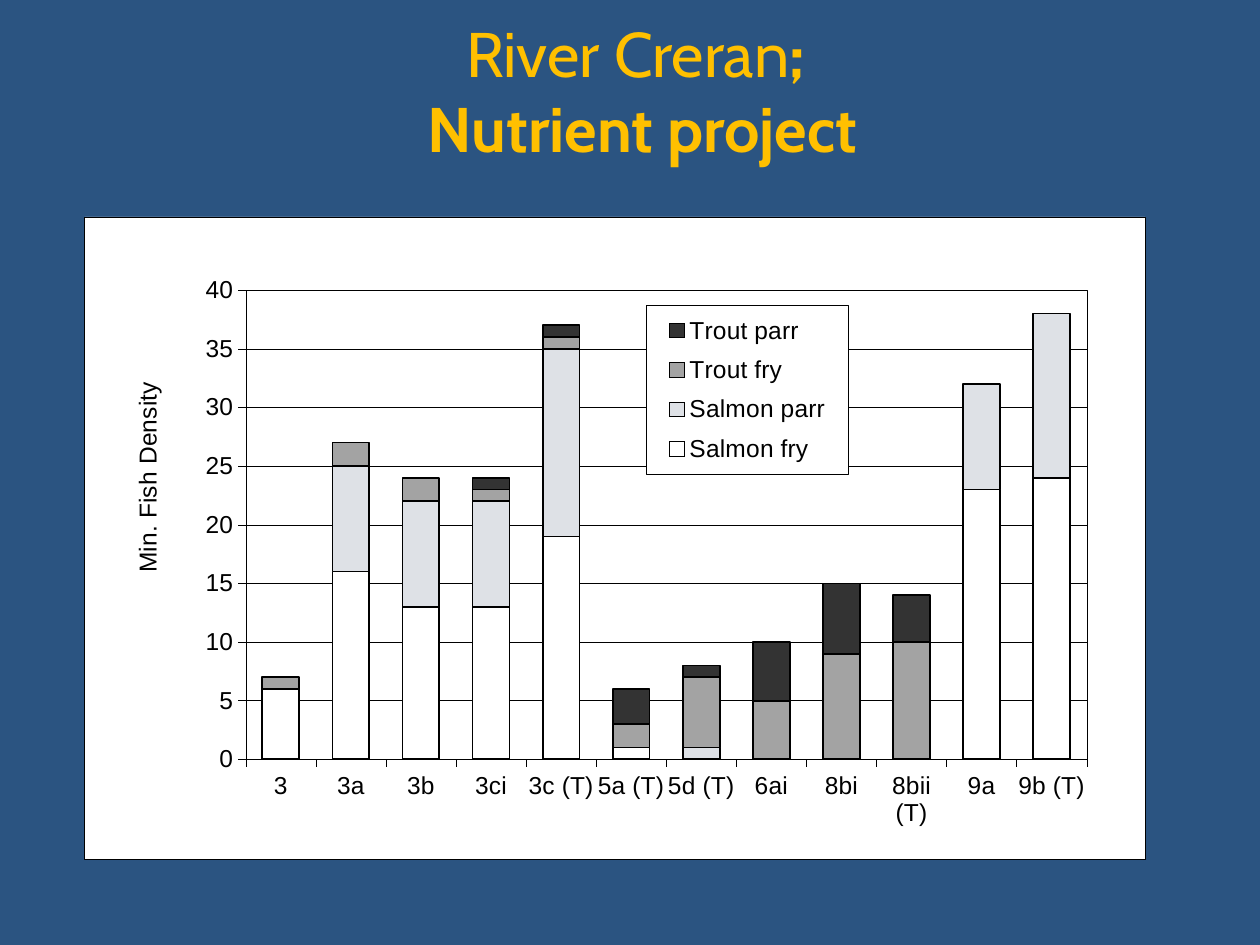
from lxml import etree
from pptx import Presentation
from pptx import util as u
from pptx.chart.data import CategoryChartData
from pptx.dml.color import RGBColor
from pptx.enum import chart as ch, text
from pptx.oxml import parse_xml
from pptx.oxml.ns import nsdecls, qn

# Content
TITLE = ("River Creran", "; ", "Nutrient project")
AXIS_TITLE = "Min. Fish Density"
SITES = ["3", "3a", "3b", "3ci", "3c (T)", "5a (T)", "5d (T)",
         "6ai", "8bi", "8bii (T)", "9a", "9b (T)"]
SERIES = [
    ("Salmon fry", "FFFFFF", [6, 16, 13, 13, 19, 1, 0, 0, 0, 0, 23, 24]),
    ("Salmon parr", "DEE1E6", [0, 9, 9, 9, 16, 0, 1, 0, 0, 0, 9, 14]),
    ("Trout fry", "A3A3A3", [1, 2, 2, 1, 1, 2, 6, 5, 9, 10, 0, 0]),
    ("Trout parr", "333333", [0, 0, 0, 1, 1, 3, 1, 5, 6, 4, 0, 0]),
]


class Theme:
    background, title, ink, paper = "2B5481", "FFC000", "000000", "FFFFFF"
    title_font, chart_font = "Cabin", "Arial"
    title_size, chart_size = u.Pt(36), u.Pt(14)
    hairline, bar_line = u.Pt(0.25), u.Pt(1)


def rgb(value):
    return RGBColor.from_string(value)


def style_line(line, width):
    line.color.rgb = rgb(Theme.ink)
    line.width = width


def panel():
    """White fill with a hairline border, for chart parts without a format."""
    return parse_xml(
        f'<c:spPr {nsdecls("c", "a")}>'
        f'<a:solidFill><a:srgbClr val="{Theme.paper}"/></a:solidFill>'
        f'<a:ln w="{Theme.hairline}"><a:solidFill>'
        f'<a:srgbClr val="{Theme.ink}"/></a:solidFill></a:ln></c:spPr>')


def place(parent, after, x, y, w=None, h=None, inner=False):
    """Give a chart part a manual layout, as fractions of the chart."""
    for old in parent.findall(qn("c:layout")):
        parent.remove(old)
    layout = etree.Element(qn("c:layout"))
    manual = etree.SubElement(layout, qn("c:manualLayout"))
    settings = [("layoutTarget", "inner" if inner else None),
                ("xMode", "edge"), ("yMode", "edge"),
                ("x", x), ("y", y), ("w", w), ("h", h)]
    for tag, value in settings:
        if value is not None:
            etree.SubElement(manual, qn(f"c:{tag}")).set("val", str(value))
    if after is None:
        parent.insert(0, layout)
    else:
        parent.find(qn(after)).addnext(layout)


def add_title(slide):
    sp = slide.shapes.title
    sp.left, sp.top, sp.width, sp.height = map(u.Cm, (0.89, 0.91, 24.13, 1.8))
    tf = sp.text_frame
    tf.auto_size = text.MSO_AUTO_SIZE.NONE
    tf.vertical_anchor = text.MSO_ANCHOR.MIDDLE
    p = tf.paragraphs[0]
    p.alignment = text.PP_ALIGN.CENTER
    river, mark, project = TITLE
    for i, part in enumerate((river, mark, project)):
        if part == project:
            p.add_line_break()
        r = p.add_run()
        r.text = part
        r.font.name, r.font.size = Theme.title_font, Theme.title_size
        r.font.bold = i > 0
        r.font.color.rgb = rgb(Theme.title)
    # The break takes the size of the text around it
    for br in p._p.findall(qn("a:br")):
        etree.SubElement(br, qn("a:rPr")).set("sz", str(int(Theme.title_size.pt * 100)))


def add_density_chart(slide):
    data = CategoryChartData(number_format="0")
    data.categories = SITES
    for name, _, values in SERIES:
        data.add_series(name, values)
    chart = slide.shapes.add_chart(
        ch.XL_CHART_TYPE.COLUMN_STACKED,
        *map(u.Cm, (1.7, 4.37, 21.39, 12.95)), data).chart
    chart.has_title = False
    chart.font.name, chart.font.size = Theme.chart_font, Theme.chart_size
    chart.font.color.rgb = rgb(Theme.ink)

    # Bars
    plot = chart.plots[0]
    plot.gap_width, plot.overlap = 90, 100
    plot.vary_by_categories = False
    for series, (_, color, _) in zip(plot.series, SERIES):
        series.format.fill.solid()
        series.format.fill.fore_color.rgb = rgb(color)
        style_line(series.format.line, Theme.bar_line)

    # Axes
    for axis in (chart.category_axis, chart.value_axis):
        axis.major_tick_mark = ch.XL_TICK_MARK.OUTSIDE
        axis.minor_tick_mark = ch.XL_TICK_MARK.NONE
        style_line(axis.format.line, Theme.hairline)
    axis = chart.value_axis
    axis.minimum_scale, axis.maximum_scale, axis.major_unit = 0, 40, 5
    axis.tick_labels.number_format = "0"
    axis.tick_labels.number_format_is_linked = False
    axis.has_major_gridlines = True
    style_line(axis.major_gridlines.format.line, Theme.hairline)
    tf = axis.axis_title.text_frame
    tf.text = AXIS_TITLE
    font = tf.paragraphs[0].runs[0].font
    font.name, font.size, font.bold = Theme.chart_font, Theme.chart_size, False
    font.color.rgb = rgb(Theme.ink)
    tf._txBody.find(qn("a:bodyPr")).set("rot", "-5400000")
    tf._txBody.find(qn("a:bodyPr")).set("vert", "horz")
    place(axis.axis_title._element, "c:tx", 0.04, 0.25)

    # Legend, plot area and chart frame
    chart.has_legend = True
    legend = chart.legend
    legend.position = ch.XL_LEGEND_POSITION.RIGHT
    legend.include_in_layout = False
    place(legend._element, "c:legendPos", 0.53, 0.137, 0.19, 0.264)
    legend._element.find(qn("c:overlay")).addnext(panel())
    space = chart._chartSpace
    area = space.find(qn("c:chart")).find(qn("c:plotArea"))
    place(area, None, 0.152, 0.114, 0.793, 0.731, inner=True)
    area.append(panel())
    space.find(qn("c:chart")).addnext(panel())


def main():
    prs = Presentation()
    prs.slide_width, prs.slide_height = u.Cm(25.4), u.Cm(19.05)
    slide = prs.slides.add_slide(prs.slide_layouts[5])
    slide.background.fill.solid()
    slide.background.fill.fore_color.rgb = rgb(Theme.background)
    add_title(slide)
    add_density_chart(slide)
    prs.save("out.pptx")


if __name__ == "__main__":
    main()
